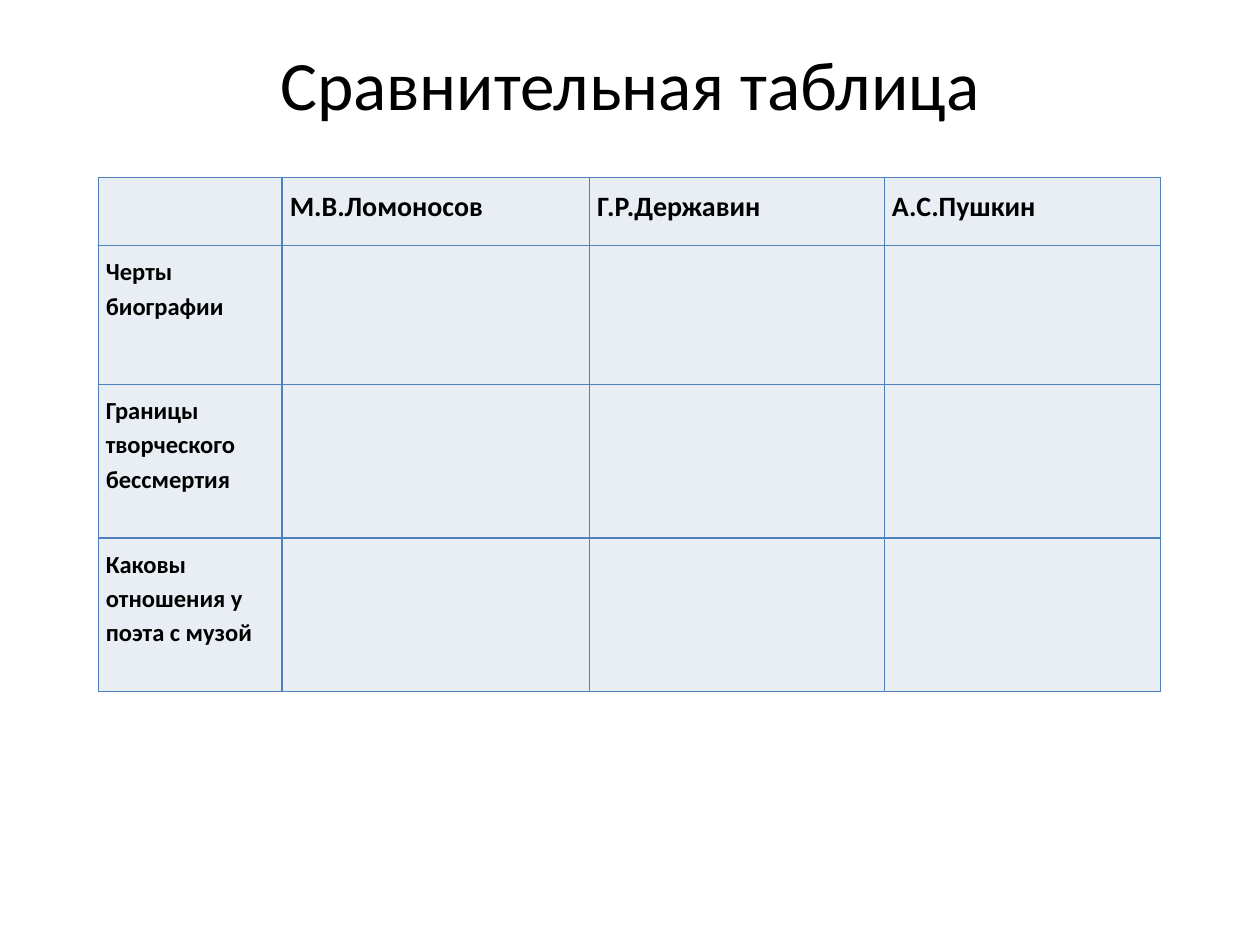
"""Build a slide with a comparison table of three poets."""
from lxml.etree import SubElement
from pptx import Presentation
from pptx.dml.color import RGBColor
from pptx.enum.text import MSO_ANCHOR, PP_ALIGN
from pptx.oxml.ns import qn
from pptx.util import Inches, Pt


def style_text(para, size, bold=False):
    for span in para.runs:
        span.font.name = "Calibri"
        span.font.size = Pt(size)
        span.font.bold = bold
        span.font.color.rgb = RGBColor.from_string("000000")


def add_borders(cell, color):
    properties = cell._tc.get_or_add_tcPr()
    for side in ("a:lnL", "a:lnR", "a:lnT", "a:lnB"):
        line = SubElement(properties, qn(side), w=str(Pt(1)))
        fill = SubElement(line, qn("a:solidFill"))
        SubElement(fill, qn("a:srgbClr"), val=color)


deck = Presentation()
deck.slide_width, deck.slide_height = Inches(10), Inches(7.5)
page = deck.slides.add_slide(deck.slide_layouts[6])

title = page.shapes.add_textbox(Inches(0.5), Inches(0.3), Inches(9), Inches(0.72))
frame = title.text_frame
frame.word_wrap = True
frame.vertical_anchor = MSO_ANCHOR.MIDDLE
frame.text = "Сравнительная таблица"
frame.paragraphs[0].alignment = PP_ALIGN.CENTER
style_text(frame.paragraphs[0], 39.6)

poets = ["", "М.В.Ломоносов", "Г.Р.Державин", "А.С.Пушкин"]
topics = ["Черты биографии", "Границы творческого бессмертия", "Каковы отношения у поэта с музой"]
rows = [poets] + [[topic, "", "", ""] for topic in topics]
widths = [1.46, 2.44, 2.34, 2.19]
heights = [0.54, 1.1, 1.22, 1.22]

table = page.shapes.add_table(
    len(rows), len(poets), Inches(0.78), Inches(1.41), Inches(8.44), Inches(4.08)
).table
for column, width in zip(table.columns, widths):
    column.width = Inches(width)
for row, height in zip(table.rows, heights):
    row.height = Inches(height)

for row_index, row in enumerate(rows):
    for column_index, words in enumerate(row):
        cell = table.cell(row_index, column_index)
        add_borders(cell, "4F81BD")
        cell.fill.solid()
        cell.fill.fore_color.rgb = RGBColor.from_string("E9EDF4")
        cell.margin_left = cell.margin_top = cell.margin_bottom = Inches(0.06)
        cell.margin_right = Inches(0.06 if column_index == len(poets) - 1 else 0)
        if words:
            cell.text_frame.text = words
            para = cell.text_frame.paragraphs[0]
            para.line_spacing = 1.15
            style_text(para, 16 if row_index == 0 else 14, bold=True)

deck.save("out.pptx")
